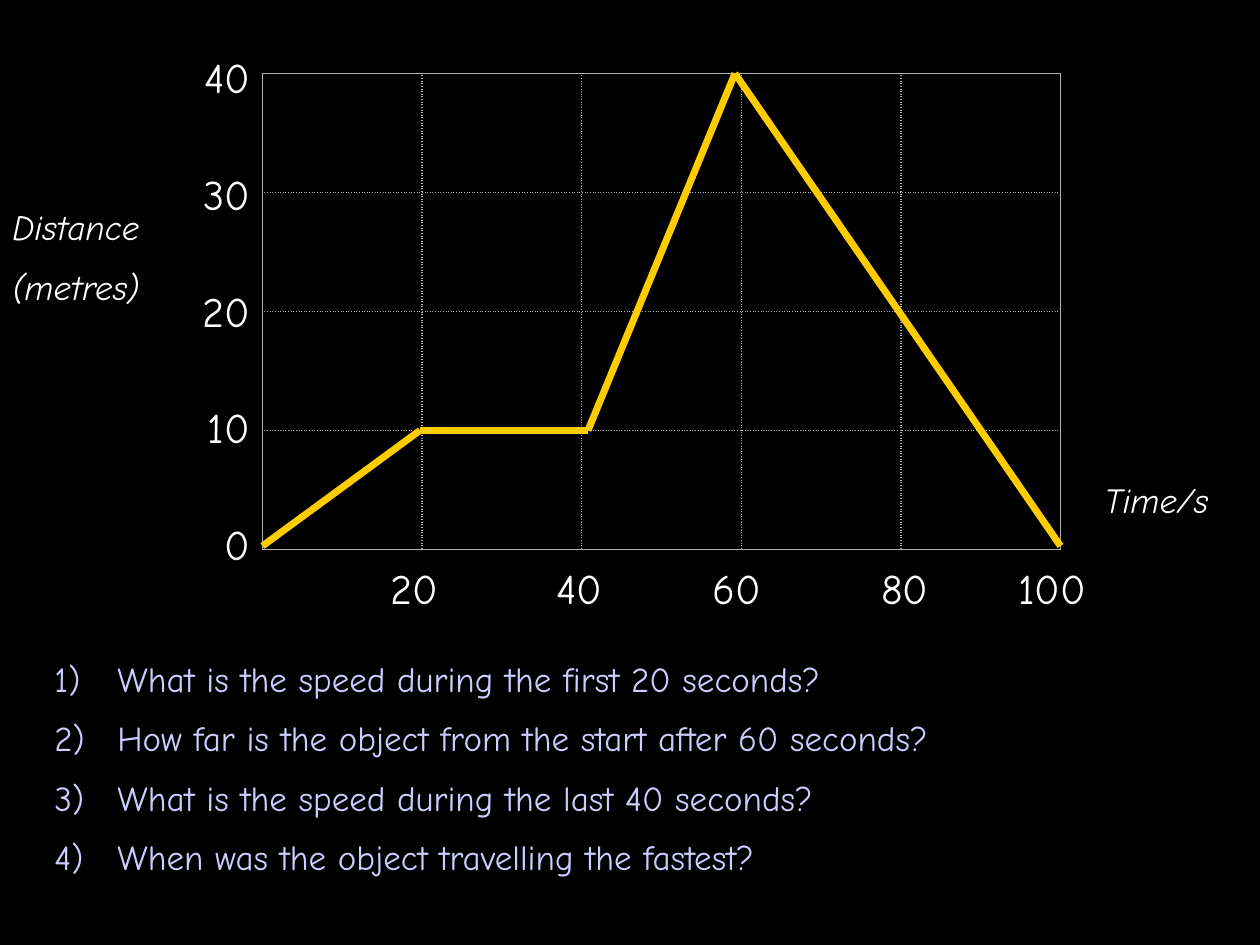
from lxml.etree import SubElement
from pptx import Presentation
from pptx.dml.color import RGBColor
from pptx.enum.shapes import MSO_CONNECTOR
from pptx.enum.text import MSO_AUTO_SIZE as AutoSize, PP_ALIGN as Align
from pptx.oxml.ns import qn
from pptx.util import Inches, Pt

UNIT = Inches(1) / 12  # everything sits on a grid of twelfths of an inch
FONT = "Comic Neue"
WHITE, LILAC, GOLD, GREY = "FFFFFF", "CCCCFF", "FFCC00", "B2B2B2"


def color(code):
    return RGBColor.from_string(code)


def add_text(place, lines, size, code=WHITE, italic=False, align=Align.LEFT,
             spacing=None, numbered=False, tabs=()):
    box = page.shapes.add_textbox(*[round(n * UNIT) for n in place])
    frame = box.text_frame
    frame.word_wrap = True
    frame.auto_size = AutoSize.SHAPE_TO_FIT_TEXT
    frame.text = "\n".join(lines)
    for para in frame.paragraphs:
        para.alignment = align
        if spacing:
            para.line_spacing = spacing
        props = para._p.get_or_add_pPr()
        before = SubElement(props, qn("a:spcBef"))
        SubElement(before, qn("a:spcPct"), val="50000")
        if numbered:
            props.set("marL", str(Inches(0.5)))
            props.set("indent", str(-Inches(0.5)))
            SubElement(props, qn("a:buFont"), typeface=FONT)
            SubElement(props, qn("a:buAutoNum"), type="arabicParenR")
        if tabs:
            stops = SubElement(props, qn("a:tabLst"))
            for stop in tabs:
                SubElement(stops, qn("a:tab"), pos=str(round(stop * UNIT)), algn="ctr")
        for span in para.runs:
            span.font.name = FONT
            span.font.size = Pt(size)
            span.font.italic = italic
            span.font.color.rgb = color(code)


deck = Presentation()
deck.slide_width, deck.slide_height = Inches(10), Inches(7.5)
page = deck.slides.add_slide(deck.slide_layouts[6])
page.background.fill.solid()
page.background.fill.fore_color.rgb = color("000000")

# Axis values
add_text((15, 0, 10, 56.3), ["40", "30", "20", "10", "0"], 24,
         align=Align.RIGHT, spacing=1.9)
add_text((36, 53, 74, 6), ["20\t40\t60\t80\t100"], 24, tabs=(18, 33, 49, 63))

# Questions
add_text((4, 62, 112, 23.2), [
    "What is the speed during the first 20 seconds?",
    "How far is the object from the start after 60 seconds?",
    "What is the speed during the last 40 seconds?",
    "When was the object travelling the fastest?",
], 20, LILAC, numbered=True)

# Graph grid: solid frame, dotted inner lines
ROWS, COLUMNS = 4, 5
place = [round(n * UNIT) for n in (25, 7, 76, 45.33)]
grid = page.shapes.add_table(ROWS, COLUMNS, *place).table
grid.first_row = grid.horz_banding = False
for row in range(ROWS):
    for column in range(COLUMNS):
        cell = grid.cell(row, column)
        props = cell._tc.get_or_add_tcPr()
        outer = {"L": column == 0, "R": column == COLUMNS - 1,
                 "T": row == 0, "B": row == ROWS - 1}
        for side, is_frame in outer.items():
            border = SubElement(props, qn(f"a:ln{side}"), w=str(Pt(1)))
            fill = SubElement(border, qn("a:solidFill"))
            SubElement(fill, qn("a:srgbClr"), val=GREY)
            SubElement(border, qn("a:prstDash"), val="solid" if is_frame else "sysDot")
        cell.fill.background()

# Distance-time line
journey = [(25, 52), (40, 41), (56, 41), (70, 7), (101, 52)]
for start, end in zip(journey, journey[1:]):
    leg = page.shapes.add_connector(
        MSO_CONNECTOR.STRAIGHT, *[round(n * UNIT) for n in start + end])
    leg.line.color.rgb = color(GOLD)
    leg.line.width = Pt(4)
    SubElement(leg._element.spPr, qn("a:effectLst"))

# Axis titles
add_text((0, 19, 16, 11.2), ["Distance", "(metres)"], 20, italic=True)
add_text((104, 45, 16, 5.2), ["Time/s"], 20, italic=True)

deck.save("out.pptx")
